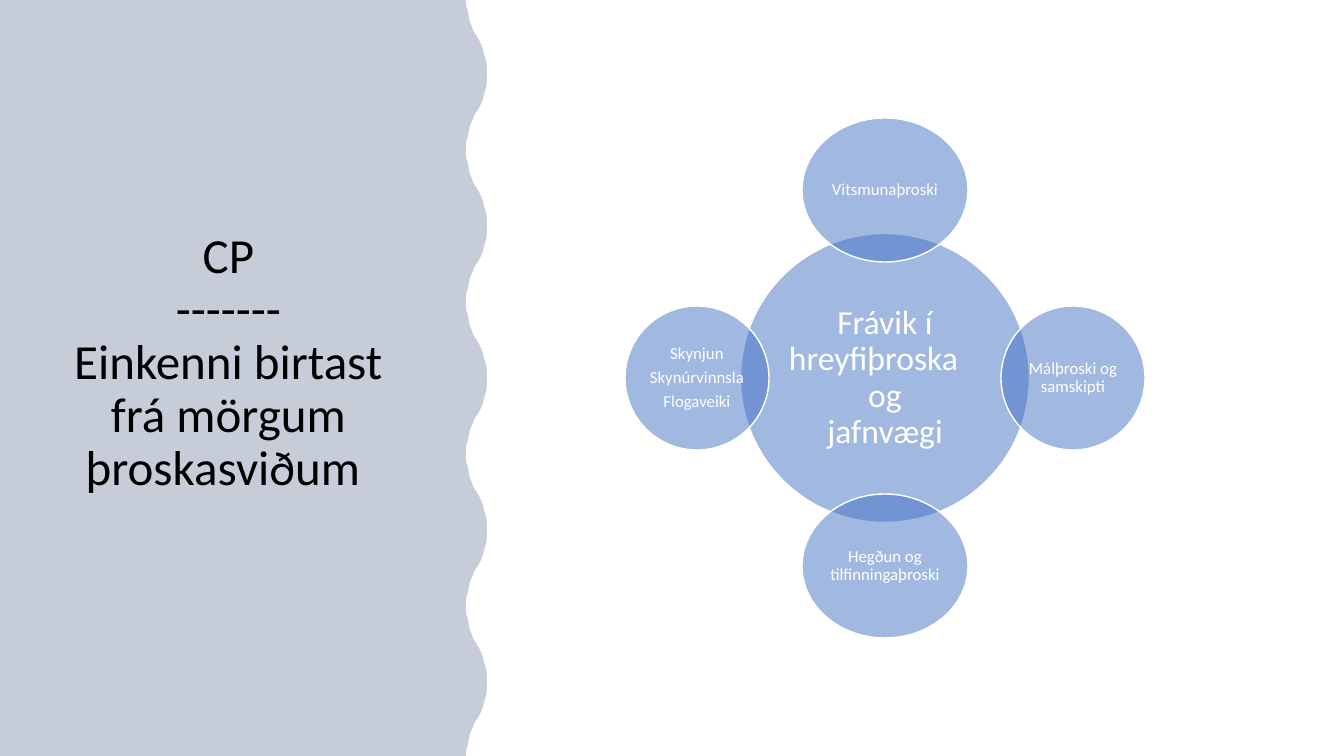
"""Build a slide with a wavy title panel and a radial diagram of developmental areas."""
import math

import pptx
import pptx.dml.color
import pptx.enum.shapes
import pptx.enum.text
import pptx.oxml.ns
import pptx.util
from lxml import etree

THEME = {
    "font": "Calibri", "white": "FFFFFF", "black": "000000",
    "panel": "203864", "circle": "4472C4",
    "title_size": 35, "center_size": 24, "outer_size": 12,
}
WIDTH, HEIGHT = 1344, 756
PX = 12192000 / WIDTH


def paint(shape, color, opacity):
    """Give a shape a solid fill with an opacity in percent and no shadow."""
    shape.shadow.inherit = False
    shape.fill.solid()
    shape.fill.fore_color.rgb = pptx.dml.color.RGBColor.from_string(color)
    if opacity < 100:
        tint = shape.fill._xPr.find(".//" + pptx.oxml.ns.qn("a:srgbClr"))
        etree.SubElement(tint, pptx.oxml.ns.qn("a:alpha"), val=str(opacity * 1000))


def write(frame, lines, size, color, anchor, gap=0):
    """Write centred paragraphs into a text frame."""
    frame_format = {"word_wrap": True, "auto_size": pptx.enum.text.MSO_AUTO_SIZE.NONE,
                    "vertical_anchor": anchor}
    for name, value in frame_format.items():
        setattr(frame, name, value)
    for index, line in enumerate(lines):
        paragraph = frame.add_paragraph() if index else frame.paragraphs[0]
        paragraph.text = line
        paragraph_format = {"alignment": pptx.enum.text.PP_ALIGN.CENTER, "line_spacing": 0.9,
                            "space_before": pptx.util.Pt(gap if index else 0)}
        for name, value in paragraph_format.items():
            setattr(paragraph, name, value)
        for run in paragraph.runs:
            for name, value in {"name": THEME["font"], "size": pptx.util.Pt(size)}.items():
                setattr(run.font, name, value)
            run.font.color.rgb = pptx.dml.color.RGBColor.from_string(color)


presentation = pptx.Presentation()
presentation.slide_width = round(WIDTH * PX)
presentation.slide_height = round(HEIGHT * PX)
slide = presentation.slides.add_slide(presentation.slide_layouts[5])
title = slide.shapes.title

half_wave = [(21, 0), (21, 7), (20, 14), (18, 20), (17, 25), (15, 30), (13, 34), (8, 42),
             (6, 47), (4, 52), (3, 56), (2, 62), (0, 69), (0, 76)]
wave = []
for crest in range(74, HEIGHT, 152):
    wave += [(x, max(0, crest - y)) for x, y in reversed(half_wave)]
    wave += [(x, min(HEIGHT, crest + y)) for x, y in half_wave[1:]]

for trough, color, opacity in [(466, THEME["white"], 100), (450, THEME["white"], 100),
                               (466, THEME["panel"], 25)]:
    builder = slide.shapes.build_freeform(0, 0, scale=PX)
    edge = [(trough + x, y) for x, y in wave]
    builder.add_line_segments([(trough, 0), *edge, (trough, HEIGHT), (0, HEIGHT)], close=True)
    panel = builder.convert_to_shape()
    paint(panel, color, opacity)
    panel.line.fill.background()

title_box = {"left": 50, "top": 80, "width": 357, "height": 421}
for name, value in title_box.items():
    setattr(title, name, round(value * PX))
write(title.text_frame, ["CP\v-------\vEinkenni birtast frá mörgum þroskasviðum "],
      THEME["title_size"], THEME["black"], pptx.enum.text.MSO_ANCHOR.BOTTOM)
slide.shapes._spTree.append(title._element)

center_x, center_y, reach = 885, 378, 188
center_lines = ["Frávik í", "hreyfiþroska", "og jafnvægi"]
circles = [
    (0, 0, 289, 289, center_lines, THEME["center_size"], 3, 0),
    (0, -1, 166, 144, ["Vitsmunaþroski"], THEME["outer_size"], 2, 0),
    (1, 0, 144, 144, ["Málþroski og samskipti"], THEME["outer_size"], 2, 0),
    (0, 1, 166, 144, ["Hegðun og tilfinningaþroski"], THEME["outer_size"], 2, 0),
    (-1, 0, 144, 144, ["Skynjun", "Skynúrvinnsla", "Flogaveiki"], THEME["outer_size"], 2, 4.2),
]
diagram = slide.shapes.add_group_shape()
labels = []
for across, down, width, height, lines, size, inset, gap in circles:
    x, y = center_x + across * reach, center_y + down * reach
    box = [round(value * PX) for value in (x - width / 2, y - height / 2, width, height)]
    circle = diagram.shapes.add_shape(pptx.enum.shapes.MSO_SHAPE.OVAL, *box)
    paint(circle, THEME["circle"], 50)
    circle.line.color.rgb = pptx.dml.color.RGBColor.from_string(THEME["white"])
    circle.line.width = pptx.util.Pt(1)

    inner_width, inner_height = width / math.sqrt(2), height / math.sqrt(2)
    inner_box = [round(value * PX) for value in
                 (x - inner_width / 2, y - inner_height / 2, inner_width, inner_height)]
    label = diagram.shapes.add_textbox(*inner_box)
    for side in ("left", "top", "right", "bottom"):
        setattr(label.text_frame, f"margin_{side}", round(inset * PX))
    write(label.text_frame, lines, size, THEME["white"], pptx.enum.text.MSO_ANCHOR.MIDDLE, gap)
    labels.append(label)

for index, margin in [(1, "marR"), (2, "marL")]:
    properties = labels[0].text_frame.paragraphs[index]._p.get_or_add_pPr()
    properties.set(margin, str(round(23 * PX)))

presentation.save("out.pptx")
